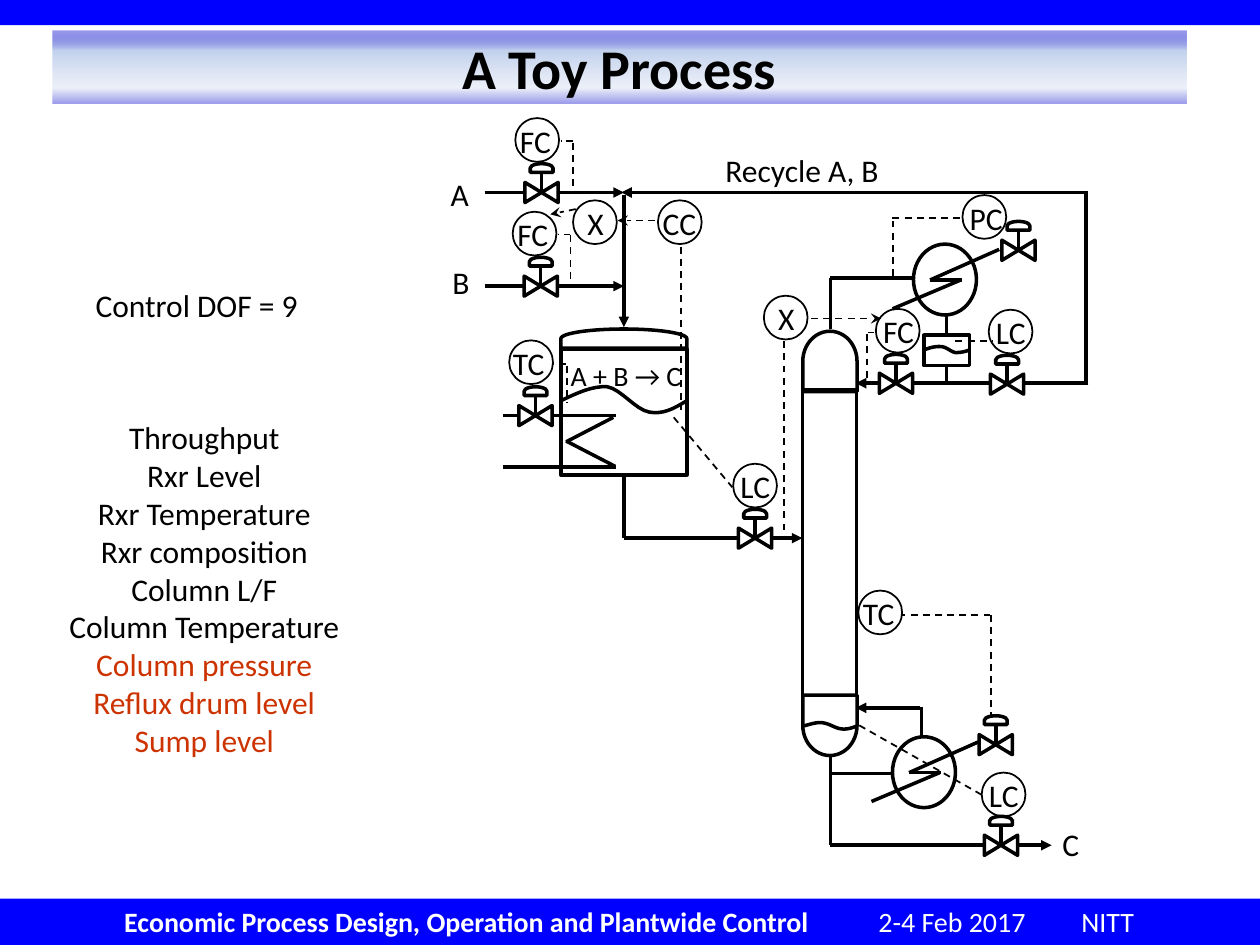
from lxml import etree
from pptx import Presentation
from pptx.dml.color import RGBColor
from pptx.enum.dml import MSO_LINE
from pptx.enum.shapes import MSO_CONNECTOR, MSO_SHAPE
from pptx.enum.text import MSO_ANCHOR, MSO_AUTO_SIZE, PP_ALIGN
from pptx.oxml import parse_xml
from pptx.oxml.ns import qn
from pptx.util import Pt

RECT, OVAL = MSO_SHAPE.RECTANGLE, MSO_SHAPE.OVAL
DELAY, COLLATE = MSO_SHAPE.FLOWCHART_DELAY, MSO_SHAPE.FLOWCHART_COLLATE
STRAIGHT, DASH = MSO_CONNECTOR.STRAIGHT, MSO_LINE.DASH
LEFT, CENTER, MIDDLE = PP_ALIGN.LEFT, PP_ALIGN.CENTER, MSO_ANCHOR.MIDDLE
FIT, NO_FIT = MSO_AUTO_SIZE.SHAPE_TO_FIT_TEXT, MSO_AUTO_SIZE.NONE
BLACK = RGBColor(0, 0, 0)
WHITE = RGBColor(255, 255, 255)
BLUE = RGBColor(0, 0, 255)
RUST = RGBColor(0xCC, 0x33, 0)
FONT = "Calibri"
TOP, BOTTOM = 0, 2

prs = Presentation()
prs.slide_width, prs.slide_height = Pt(720), Pt(540)
slide = prs.slides.add_slide(prs.slide_layouts[5])
shapes = slide.shapes


def add_outline(kind, x, y, w, h, weight=2, rotation=0):
    outline = shapes.add_shape(kind, Pt(x), Pt(y), Pt(w), Pt(h))
    outline.shadow.inherit = False
    outline.rotation = rotation
    outline.fill.background()
    outline.line.color.rgb = BLACK
    outline.line.width = Pt(weight)
    return outline


def add_flow(x1, y1, x2, y2, arrow=None, weight=2, dash=None):
    flow = shapes.add_connector(STRAIGHT, Pt(x1), Pt(y1), Pt(x2), Pt(y2))
    flow.line.color.rgb = BLACK
    flow.line.width = Pt(weight)
    if dash:
        flow.line.dash_style = dash
    properties = flow._element.spPr
    if arrow:
        etree.SubElement(properties.find(qn("a:ln")), qn("a:tailEnd"), type=arrow)
    etree.SubElement(properties, qn("a:effectLst"))
    return flow


top_bar = add_outline(RECT, 0, 0, 720, 14.4)
footer = add_outline(RECT, 0, 513.5, 720, 26.5)
for bar in (top_bar, footer):
    bar.fill.solid()
    bar.fill.fore_color.rgb = BLUE
    bar.line.fill.background()

footer_frame = footer.text_frame
footer_frame.margin_left = Pt(71)
footer_frame.vertical_anchor = MIDDLE
event = footer_frame.paragraphs[0]
event.text = "Economic Process Design, Operation and Plantwide Control"
event.add_run().text = "\t2-4 Feb 2017\tNITT"
event.alignment = LEFT
tab_stops = etree.SubElement(event._p.get_or_add_pPr(), qn("a:tabLst"))
for stop in (431, 547):
    etree.SubElement(tab_stops, qn("a:tab"), pos=str(Pt(stop)), algn="l")
for run, bold in zip(event.runs, (True, False)):
    run.font.name, run.font.size, run.font.bold = FONT, Pt(16), bold
    run.font.color.rgb = WHITE

title = shapes.title
title.left, title.top, title.width, title.height = Pt(30), Pt(17.3), Pt(648), Pt(42)
title.text_frame.text = "A Toy Process"
title.text_frame.auto_size = NO_FIT
title.text_frame.vertical_anchor = MIDDLE
heading = title.text_frame.paragraphs[0]
heading.alignment = CENTER
heading_font = heading.runs[0].font
heading_font.name, heading_font.size, heading_font.bold = FONT, Pt(32), True
heading_font.color.rgb = BLACK
stops = "".join(
    f'<a:gs pos="{pos}000"><a:srgbClr val="{color}"><a:alpha val="{alpha}000"/></a:srgbClr></a:gs>'
    for pos, color, alpha in [(1, "0000CC", 39), (27, "C2D1ED", 100),
                              (78, "D2DDF1", 40), (100, "0000CC", 40)])
title._element.spPr.append(parse_xml(
    '<a:gradFill xmlns:a="http://schemas.openxmlformats.org/drawingml/2006/main">'
    f'<a:gsLst>{stops}</a:gsLst><a:lin ang="5400000" scaled="0"/></a:gradFill>'))

reactor = add_outline(RECT, 320.5, 199.5, 72, 72)
add_outline(DELAY, 351, 157.5, 11, 72, rotation=270)
add_outline(RECT, 458.5, 223, 31, 174.5)
add_outline(DELAY, 457, 191, 34.5, 31, rotation=270)
add_outline(DELAY, 457, 399, 34.5, 31, rotation=90)
reflux_drum = add_outline(RECT, 528, 191.5, 26, 17.5)

for x, y in [(522, 139.5), (510, 421)]:
    add_outline(OVAL, x, y, 36, 40.5)
    add_flow(x + 49, y + 3, x + 9.5, y + 20.5)
    add_flow(x + 27.5, y + 20.5, x + 9.5, y + 20.5)
    add_flow(x + 27, y + 20.5, x - 12, y + 37)

pipes = [
    (352, 237.5, 287.5, 237.5), (352, 267, 287.5, 267),
    (351.5, 266.5, 323.5, 252), (350.5, 238.5, 323.5, 252.5),
    (474.5, 188, 474.5, 159), (474.5, 159, 521.5, 159),
    (474.5, 432.5, 474.5, 483), (474.5, 442, 510, 442),
    (526.5, 404, 526.5, 421), (620.5, 218, 620.5, 110),
]
for pipe in pipes:
    add_flow(*pipe)

arrow_pipes = [
    (277, 110, 356.5, 110), (277, 163.5, 356.5, 163.5),
    (356.5, 111.5, 356.5, 187), (356.5, 307.5, 458.5, 307.5),
    (622, 219, 489, 219), (621.5, 110, 355, 110),
    (474.5, 483, 601, 483), (525.5, 404.5, 489, 404.5),
]
for pipe in arrow_pipes:
    add_flow(*pipe, arrow="triangle")

add_flow(356.5, 307.5, 356.5, 271.5).end_connect(reactor, BOTTOM)
add_flow(541, 180, 541, 191.5).end_connect(reflux_drum, TOP)
add_flow(541, 209, 541, 219.5).begin_connect(reflux_drum, BOTTOM)

liquid_levels = [
    [(320.5, 229), (330, 224.5), (338.5, 220.5), (347, 221), (355, 222.5),
     (363, 234), (371, 235.5), (379, 237), (385, 233.5), (392.5, 229)],
    [(528, 200), (531.5, 198.5), (534.5, 198), (537, 198), (541, 198),
     (543, 201), (546, 201.5), (549, 201.5), (551.5, 201), (554, 200)],
    [(458.5, 415), (463, 414), (466.5, 412.5), (470, 413), (474, 413.5),
     (477, 416), (480.5, 416.5), (484, 417), (486.5, 416), (489.5, 415)],
]
STEPS = 8
for level in liquid_levels:
    surface = []
    for start in range(0, 9, 3):
        curve = level[start:start + 4]
        for step in range(1, STEPS + 1):
            t = step / STEPS
            weights = ((1 - t) ** 3, 3 * t * (1 - t) ** 2, 3 * t * t * (1 - t), t ** 3)
            surface.append(tuple(Pt(sum(w * p[axis] for w, p in zip(weights, curve)))
                                 for axis in (0, 1)))
    builder = shapes.build_freeform(Pt(level[0][0]), Pt(level[0][1]))
    builder.add_line_segments(surface, close=False)
    wave = builder.convert_to_shape()
    wave.shadow.inherit = False
    wave.fill.background()
    wave.line.color.rgb = BLACK
    wave.line.width = Pt(2)

valves = [(306, 237.5), (309, 163.5), (431.5, 307.5), (582, 143), (575.5, 219.5),
          (512, 219), (572, 483), (569, 425.5), (309.5, 110)]
for x, y in valves:
    body = add_outline(COLLATE, x - 5.75, y - 9.5, 11.5, 19, rotation=270)
    body.fill.solid()
    body.fill.fore_color.rgb = WHITE
    add_outline(DELAY, x - 2.5, y - 20.5, 5, 13, rotation=270)
    add_flow(x, y, x, y - 11.5)

signals = [
    (323.5, 208, 316, 208), (324, 209, 324, 230.5), (385, 238.5, 418.5, 278.5),
    (327.5, 80.5, 320.5, 80.5), (327.5, 81.5, 327.5, 110), (546, 195, 567.5, 195),
    (510, 124.5, 548.5, 124.5), (510.5, 126, 510.5, 160), (566, 351.5, 515.5, 351.5),
    (566.5, 351.5, 566.5, 409), (491, 414.5, 561.5, 454.5), (448, 195, 448, 306.5),
    (496, 190, 499.5, 190), (495.5, 191, 495.5, 219.5), (326, 134, 319, 134),
    (326, 134.5, 326, 163.5), (389, 141, 389, 234.5),
]
for signal in signals:
    add_flow(*signal, weight=1, dash=DASH)
setpoints = [(463.5, 182, 503.5, 182), (329, 119.5, 314.5, 122.5), (374.5, 126, 353, 126)]
for setpoint in setpoints:
    add_flow(*setpoint, arrow="stealth", weight=1, dash=DASH)

inventory_loops = ["Column pressure", "Reflux drum level", "Sump level"]
controlled = ["Throughput", "Rxr Level", "Rxr Temperature", "Rxr composition",
              "Column L/F", "Column Temperature"] + inventory_loops
labels = [
    ("A", 250.5, 96.5, 25, 29, 18), ("B", 251.5, 147, 24.5, 29, 18),
    ("C", 600, 468, 24.5, 29, 18), ("Recycle A, B", 407.5, 83, 103, 29, 18),
    ("A + B → C", 319, 201.5, 78.5, 26.5, 16),
    ("Control DOF = 9", 47.5, 160, 132, 29, 18),
    ("\n".join(controlled), 31.5, 235.5, 170.5, 204, 18),
]

label_widths = {"TC": 32.5, "LC": 31.5, "FC": 32.5, "PC": 34, "CC": 34, "X": 24}
controllers = [
    ("TC", 291, 194.5, -5), ("LC", 419, 265, -3), ("FC", 294.5, 67.5, -4.5),
    ("LC", 565, 177, -3), ("PC", 550, 111.5, -3), ("TC", 490.5, 337.5, -4.5),
    ("LC", 561, 441.5, -3), ("X", 436.5, 169, 1), ("FC", 500.5, 176.5, -3),
    ("FC", 293, 121, -4.5), ("CC", 376, 114.5, -4.5), ("X", 327.5, 114.5, 1),
]
for tag, x, y, shift in controllers:
    add_outline(OVAL, x, y, 25, 25, weight=1)
    labels.append((tag, x + shift, y - 1.5, label_widths[tag], 29, 18))

for wording, x, y, w, h, size in labels:
    frame = shapes.add_textbox(Pt(x), Pt(y), Pt(w), Pt(h)).text_frame
    frame.text = wording
    frame.word_wrap = False
    frame.auto_size = FIT
    for paragraph in frame.paragraphs:
        paragraph.alignment = CENTER if paragraph.text in controlled else LEFT
        font = paragraph.runs[0].font
        font.name, font.size = FONT, Pt(size)
        font.color.rgb = RUST if paragraph.text in inventory_loops else BLACK

prs.save("out.pptx")
